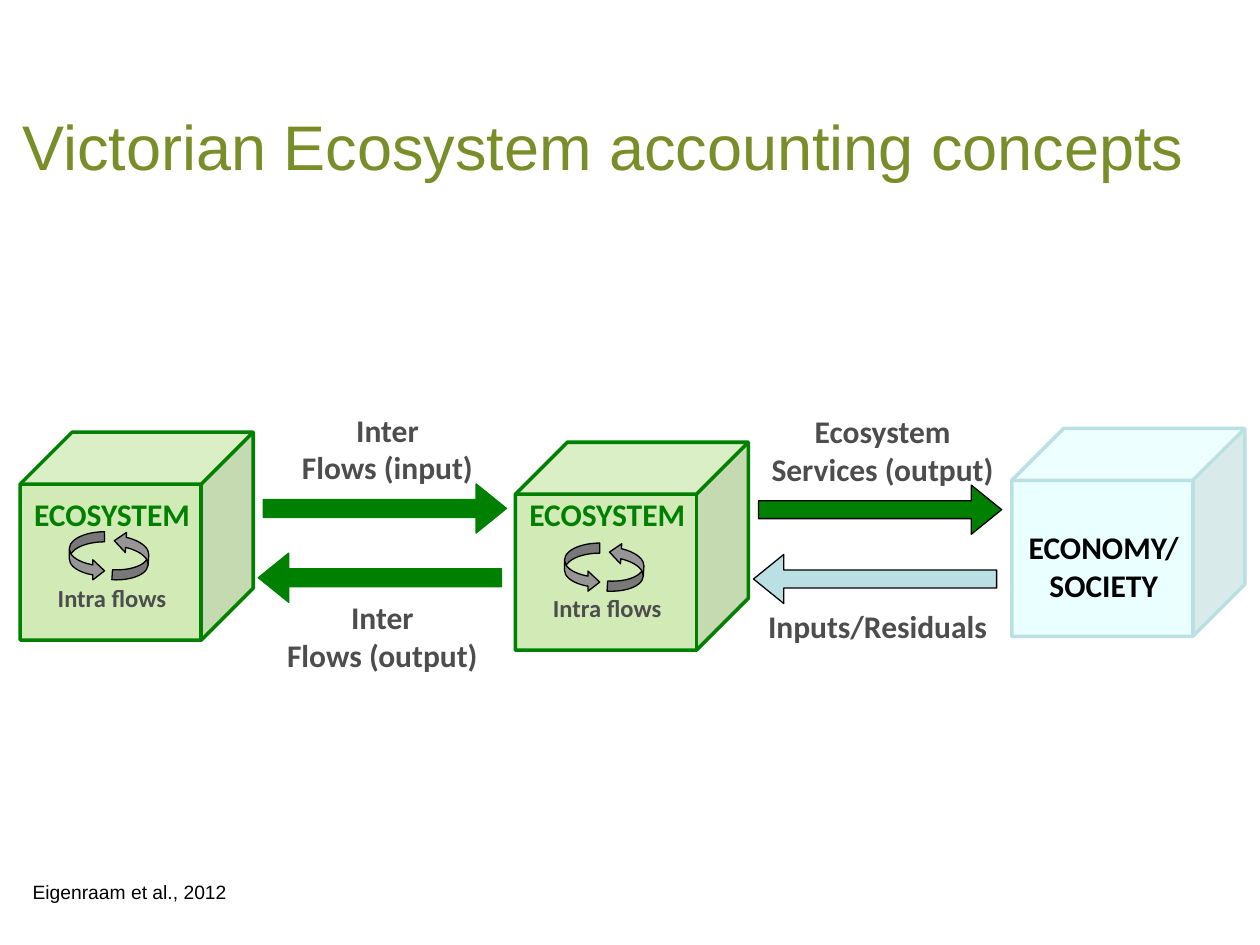
import pptx
import pptx.util
import pptx.dml.color
import pptx.enum.shapes
import pptx.enum.text
import pptx.oxml.ns
import lxml.etree

Inches = pptx.util.Inches
Pt = pptx.util.Pt
Shape = pptx.enum.shapes.MSO_SHAPE
Align = pptx.enum.text.PP_ALIGN
Anchor = pptx.enum.text.MSO_ANCHOR

THEME = {
    "olive": "798D29", "green": "008000", "leaf": "92D050", "ice": "CCFFFF",
    "teal": "BBE0E3", "gray": "969696", "dark": "4D4D4D", "black": "000000",
    "title": 36, "label": 18, "detail": 14, "source": 11,
}


def add_figure(kind, left, top, width, height, fill, line, weight, adjustments, rotation=0, opacity=100):
    figure = page.shapes.add_shape(kind, Inches(left), Inches(top), Inches(width), Inches(height))
    figure.shadow.inherit = False
    figure.rotation = rotation
    for index, value in enumerate(adjustments):
        figure.adjustments[index] = value
    figure.fill.solid()
    figure.fill.fore_color.rgb = pptx.dml.color.RGBColor.from_string(THEME[fill])
    if opacity < 100:
        color = figure._element.spPr.find(".//" + pptx.oxml.ns.qn("a:srgbClr"))
        alpha = lxml.etree.SubElement(color, pptx.oxml.ns.qn("a:alpha"))
        alpha.set("val", str(opacity * 1000))
    figure.line.color.rgb = pptx.dml.color.RGBColor.from_string(THEME[line])
    figure.line.width = Pt(weight)


def add_text(lines, left, top, width, height, size, color, font="Calibri", bold=True,
             align=Align.CENTER, anchor=Anchor.TOP):
    box = page.shapes.add_textbox(Inches(left), Inches(top), Inches(width), Inches(height))
    frame = box.text_frame
    frame.word_wrap = True
    frame.vertical_anchor = anchor
    frame.text = "\n".join(lines)
    for para in frame.paragraphs:
        para.alignment = align
        para.font.name = font
        para.font.size = Pt(THEME[size])
        para.font.bold = bold
        para.font.color.rgb = pptx.dml.color.RGBColor.from_string(THEME[color])


deck = pptx.Presentation()
deck.slide_width = Inches(10)
deck.slide_height = Inches(7.5)
page = deck.slides.add_slide(deck.slide_layouts[6])

add_text(["Victorian Ecosystem accounting concepts"], 0.08, 0.6, 9.65, 1.1,
         "title", "olive", "Arial", False, Align.LEFT, Anchor.MIDDLE)

cubes = [
    (0.16, 3.43, "leaf", "green"),
    (4.09, 3.51, "leaf", "green"),
    (8.03, 3.4, "ice", "teal"),
]
for left, top, fill, line in cubes:
    add_figure(Shape.CUBE, left, top, 1.85, 1.65, fill, line, 2, [0.25], opacity=41)

flows = [
    (2.09, 3.84, 0, "green", "green"),
    (2.05, 4.39, 180, "green", "green"),
    (6.02, 3.85, 0, "green", "black"),
    (5.98, 4.4, 180, "teal", "black"),
]
for left, top, rotation, fill, line in flows:
    add_figure(Shape.RIGHT_ARROW, left, top, 1.93, 0.39, fill, line, 0.75, [0.366, 0.617], rotation)

flow_labels = [
    (["Inter", "Flows (input)"], 2.05, 3.21),
    (["Inter", "Flows (output)"], 2.01, 4.7),
    (["Ecosystem", "Services (output)"], 5.98, 3.22),
    (["Inputs/Residuals"], 5.94, 4.77),
]
for lines, left, top in flow_labels:
    add_text(lines, left, top, 2.05, 0.1 + 0.3 * len(lines), "label", "dark")

for left, cycle_top, detail_top in [(0.16, 4.22, 4.58), (4.09, 4.31, 4.66)]:
    add_text(["ECOSYSTEM"], left, 3.88, 1.46, 0.4, "label", "green")
    for offset, rotation in [(0.39, 0), (0.74, 183.5)]:
        add_figure(Shape.CURVED_RIGHT_ARROW, left + offset, cycle_top, 0.28, 0.39,
                   "gray", "black", 0.75, [0.286, 0.571, 0.333], rotation)
    add_text(["Intra flows"], left, detail_top, 1.46, 0.33, "detail", "dark")

add_text(["ECONOMY/SOCIETY"], 8.03, 4.14, 1.46, 0.7, "label", "black")
add_text(["Eigenraam et al., 2012"], 0.16, 6.94, 1.79, 0.29,
         "source", "black", "Arial", False, Align.LEFT)

deck.save("out.pptx")
